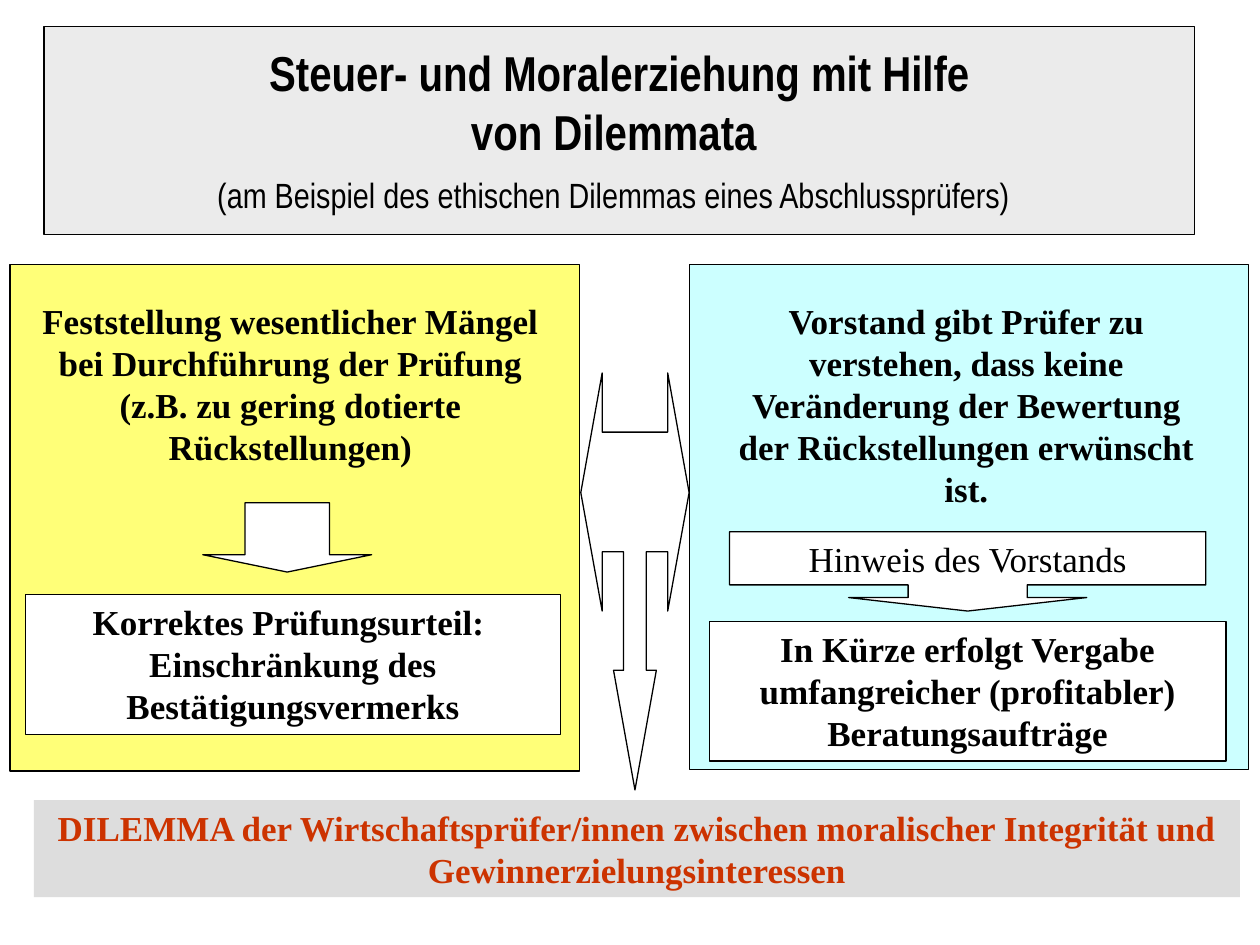
import pptx
import pptx.dml.color
import pptx.enum.shapes
import pptx.enum.text
import pptx.oxml
import pptx.oxml.ns
import pptx.util
from pptx.util import Inches

COLORS = {
    "black": "000000",
    "white": "FFFFFF",
    "gray": "DDDDDD",
    "yellow": "FFFF00",
    "cyan": "CCFFFF",
    "red": "CC3300",
}
SERIF = "Times New Roman"
NARROW = "Arial Narrow"
SHAPES = pptx.enum.shapes.MSO_SHAPE
ANCHOR = pptx.enum.text.MSO_ANCHOR


def rgb(name):
    return pptx.dml.color.RGBColor.from_string(COLORS[name])


def style_shape(shape, fill, outlined=True, opacity=None):
    shape.shadow.inherit = False
    shape.fill.solid()
    shape.fill.fore_color.rgb = rgb(fill)
    if opacity is not None:
        color = shape.fill._xPr.find(".//" + pptx.oxml.ns.qn("a:srgbClr"))
        alpha = color.makeelement(pptx.oxml.ns.qn("a:alpha"), {"val": str(opacity * 1000)})
        color.append(alpha)
    if outlined:
        shape.line.color.rgb = rgb("black")
        shape.line.width = pptx.util.Pt(0.75)
    else:
        shape.line.fill.background()


def add_box(slide, box, fill, kind=SHAPES.RECTANGLE, adjustments=(), **style):
    shape = slide.shapes.add_shape(kind, *map(Inches, box))
    for index, value in enumerate(adjustments):
        shape.adjustments[index] = value
    style_shape(shape, fill, **style)
    return shape


def format_run(run, size=20, font=SERIF, bold=True, color="black"):
    run.font.size = pptx.util.Pt(size)
    run.font.name = font
    run.font.bold = bold
    run.font.color.rgb = rgb(color)


def set_text(shape, text, anchor=ANCHOR.TOP, wrap=True, **run_style):
    frame = shape.text_frame
    frame.text = text
    frame.word_wrap = wrap
    frame.vertical_anchor = anchor
    for paragraph in frame.paragraphs:
        paragraph.alignment = pptx.enum.text.PP_ALIGN.CENTER
        for run in paragraph.runs:
            format_run(run, **run_style)


def add_label(slide, box, text):
    set_text(slide.shapes.add_textbox(*map(Inches, box)), text)


def add_title(slide):
    title = add_box(slide, (0.35, 0.21, 9.13, 1.65), "gray", opacity=59)
    set_text(
        title,
        "Steuer- und Moralerziehung mit Hilfe\vvon Dilemmata \v"
        "(am Beispiel des ethischen Dilemmas eines Abschlussprüfers)",
        anchor=ANCHOR.MIDDLE, size=28, font=NARROW,
    )
    frame = title.text_frame
    frame.margin_left = frame.margin_right = frame.margin_top = frame.margin_bottom = 0
    paragraph = frame.paragraphs[0]
    format_run(paragraph.runs[-1], font=NARROW, bold=False)
    closing_space = paragraph.add_run()
    closing_space.text = " "
    format_run(closing_space, size=28, font=NARROW, bold=False)


def add_three_way_arrow(slide):
    center = 5.04
    right_half = [
        (0, 6.27), (0.17, 5.32), (0.09, 5.32), (0.09, 4.38), (0.26, 4.38),
        (0.26, 4.85), (0.43, 3.91), (0.26, 2.96), (0.26, 3.43),
    ]
    left_half = [(-offset, y) for offset, y in reversed(right_half[1:])]
    points = [(Inches(center + offset), Inches(y)) for offset, y in right_half + left_half]
    builder = slide.shapes.build_freeform(*points[0], scale=1.0)
    builder.add_line_segments(points[1:], close=True)
    style_shape(builder.convert_to_shape(), "white")


def main():
    presentation = pptx.Presentation()
    presentation.slide_width = Inches(10)
    presentation.slide_height = Inches(7.5)
    slide = presentation.slides.add_slide(presentation.slide_layouts[6])

    add_title(slide)
    add_box(slide, (0.08, 2.1, 4.52, 4.02), "yellow", opacity=53)
    add_box(slide, (5.47, 2.1, 4.44, 4.01), "cyan")
    add_three_way_arrow(slide)

    add_label(
        slide, (0.17, 2.33, 4.27, 1.43),
        "Feststellung wesentlicher Mängel bei Durchführung der Prüfung "
        "(z.B. zu gering dotierte Rückstellungen)",
    )
    add_box(slide, (1.61, 3.99, 1.34, 0.55), "white", SHAPES.DOWN_ARROW, (0.5, 0.25))
    verdict = add_box(slide, (0.2, 4.72, 4.25, 1.11), "white")
    set_text(verdict, "Korrektes Prüfungsurteil: \nEinschränkung des Bestätigungsvermerks")

    add_label(
        slide, (5.69, 2.33, 3.96, 1.77),
        "Vorstand gibt Prüfer zu verstehen, dass keine Veränderung der Bewertung "
        "der Rückstellungen erwünscht ist.",
    )
    hint = add_box(
        slide, (5.79, 4.22, 3.78, 0.63), "white",
        SHAPES.DOWN_ARROW_CALLOUT, (1.5, 1.5, 0.17, 0.67),
    )
    set_text(hint, "Hinweis des Vorstands", anchor=ANCHOR.MIDDLE, wrap=False, bold=False)
    offer = add_box(slide, (5.63, 4.93, 4.1, 1.11), "white")
    set_text(offer, "In Kürze erfolgt Vergabe umfangreicher (profitabler) Beratungsaufträge")

    dilemma = add_box(slide, (0.27, 6.35, 9.57, 0.77), "gray", outlined=False)
    set_text(
        dilemma,
        "DILEMMA der Wirtschaftsprüfer/innen zwischen moralischer Integrität und "
        "Gewinnerzielungsinteressen",
        color="red",
    )
    presentation.save("out.pptx")


if __name__ == "__main__":
    main()
